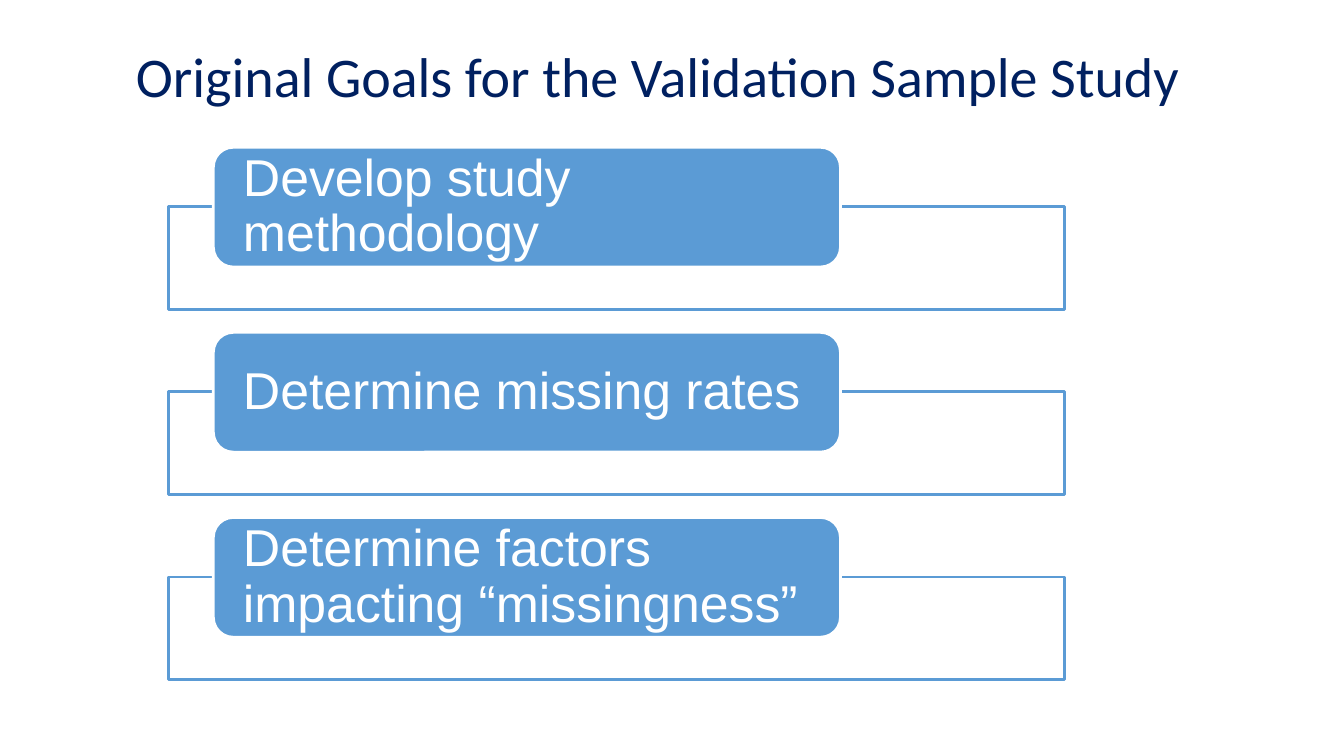
from dataclasses import dataclass
from pptx import Presentation as Deck
from pptx.dml.color import RGBColor
from pptx.enum.shapes import MSO_SHAPE as Kind
from pptx.enum.text import MSO_ANCHOR as Anchor, PP_ALIGN as Align
from pptx.oxml.ns import qn
from pptx.shapes.autoshape import Shape
from pptx.slide import Slide
from pptx.text.text import TextFrame
from pptx.util import Pt
from lxml.etree import SubElement

BLUE = "5B9BD5"
WHITE = "FFFFFF"
NAVY = "002060"
STEP = 132.2


@dataclass
class Box:
    kind: Kind
    left: float
    top: float
    width: float
    height: float
    fill: str
    line: str


@dataclass
class Style:
    font: str
    size: float
    color: str
    frame: dict
    para: dict


FRAME = Box(Kind.RECTANGLE, 120.3, 147.7, 640, 73.4, WHITE, BLUE)
PILL = Box(Kind.ROUNDED_RECTANGLE, 152.4, 105.2, 448, 85.6, BLUE, WHITE)
GOAL = Style(
    "Arial", 37, WHITE,
    {"word_wrap": True, "vertical_anchor": Anchor.MIDDLE,
     "margin_left": Pt(17), "margin_right": Pt(17),
     "margin_top": 0, "margin_bottom": 0},
    {"alignment": Align.LEFT, "line_spacing": 0.9},
)
HEAD = Style("Calibri", 40, NAVY, {"word_wrap": True}, {"alignment": Align.LEFT})
GOALS = [
    "Develop study methodology",
    "Determine missing rates",
    "Determine factors impacting “missingness”",
]


def paint(target, color: str) -> None:
    target.rgb = RGBColor.from_string(color)


def assign(target, values: dict) -> None:
    for name, value in values.items():
        setattr(target, name, value)


def draw(slide: Slide, box: Box, shift: float) -> Shape:
    shape = slide.shapes.add_shape(
        box.kind, Pt(box.left), Pt(box.top + shift), Pt(box.width), Pt(box.height))
    shape.shadow.inherit = False
    shape.fill.solid()
    paint(shape.fill.fore_color, box.fill)
    paint(shape.line.color, box.line)
    shape.line.width = Pt(2)
    return shape


def fade(shape: Shape, share: int) -> None:
    color = shape.fill._xPr.find(qn("a:solidFill"))[0]
    SubElement(color, qn("a:alpha"), val=str(share * 1000))


def write(frame: TextFrame, text: str, style: Style) -> None:
    assign(frame, style.frame)
    para = frame.paragraphs[0]
    assign(para, style.para)
    run = para.add_run()
    run.text = text
    assign(run.font, {"name": style.font, "size": Pt(style.size)})
    paint(run.font.color, style.color)


def main() -> None:
    deck = Deck()
    assign(deck, {"slide_width": Pt(960), "slide_height": Pt(540)})
    slide = deck.slides.add_slide(deck.slide_layouts[6])
    for row, goal in enumerate(GOALS):
        fade(draw(slide, FRAME, row * STEP), 90)
        pill = draw(slide, PILL, row * STEP)
        write(pill.text_frame, goal, GOAL)
    title = slide.shapes.add_textbox(Pt(90), Pt(26), Pt(794), Pt(55.5))
    write(title.text_frame, "Original Goals for the Validation Sample Study", HEAD)
    deck.save("out.pptx")


if __name__ == "__main__":
    main()
